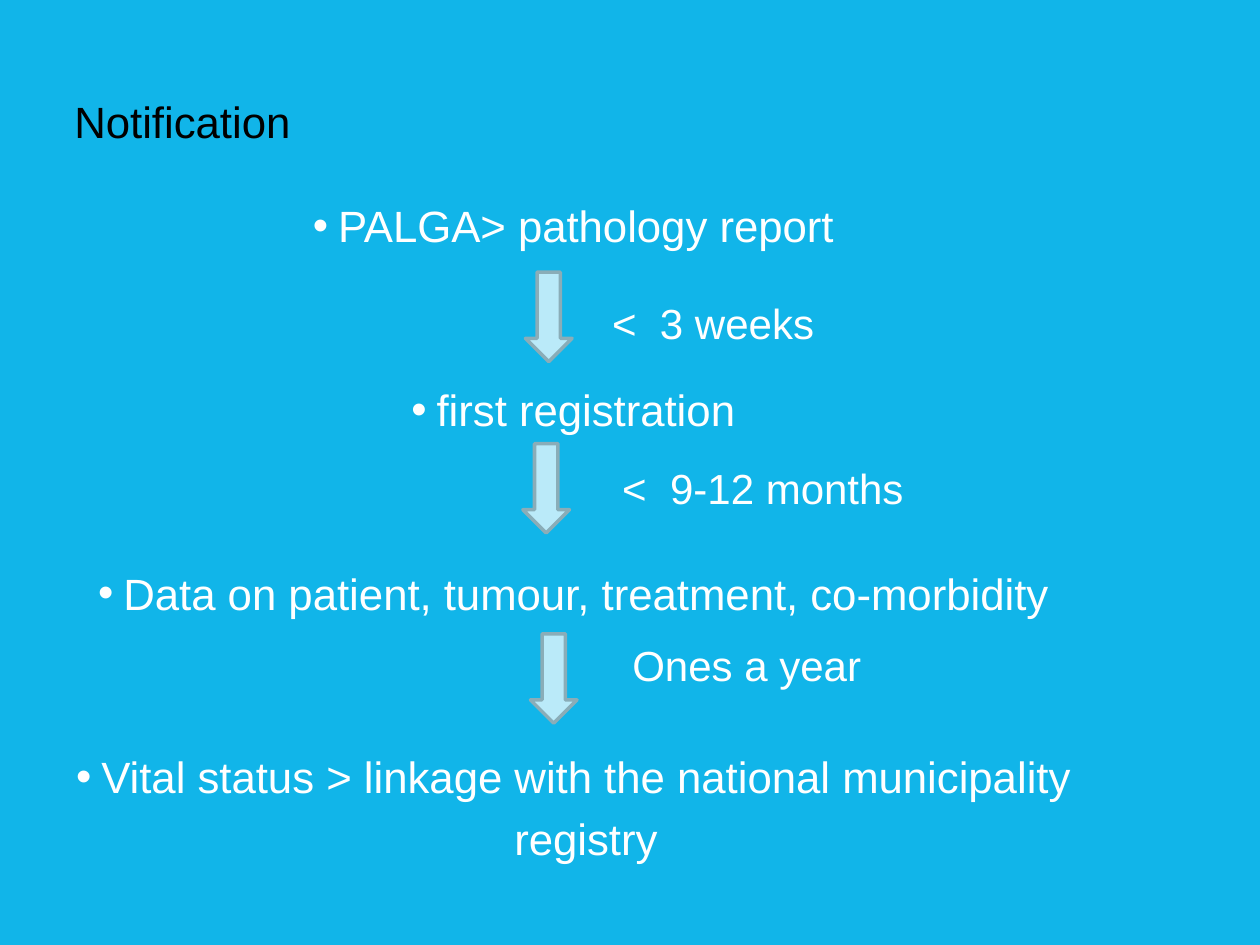
from lxml import etree
from pptx import Presentation
from pptx.dml.color import RGBColor
from pptx.enum import shapes, text
from pptx.oxml.ns import qn
from pptx.util import Inches, Pt

HEADING = "Notification"
STEPS = [
    "PALGA> pathology report",
    "first registration",
    "Data on patient, tumour, treatment, co-morbidity",
    "Vital status > linkage with the national municipality registry",
]
# Interval wording, its (left, top, width), and the (left, top) of its arrow
INTERVALS = [
    ("<\t3 weeks", (4.76, 2.31, 1.94), (4.17, 2.16)),
    ("<\t9-12 months", (4.84, 3.62, 2.57), (4.15, 3.52)),
    ("Ones a year", (4.92, 5.03, 2.57), (4.21, 5.03)),
]
ARROW_SIZE = (0.37, 0.71)
INTERVAL_HEIGHT = 0.5
NUMBER_TAB = 0.38
BULLET_INDENT = 0.2

THEME = {
    "font": "Arial",
    "background": RGBColor(0x11, 0xB5, 0xE9),
    "heading": RGBColor(0, 0, 0),
    "text": RGBColor(0xFF, 0xFF, 0xFF),
    "arrow": RGBColor(0xBA, 0xEA, 0xF9),
    "arrow_line": RGBColor(0x8A, 0xAD, 0xB8),
    "main_size": 25,
    "interval_size": 24,
    "step_leading": 35,
}


def place(shape, left, top, width, height):
    shape.left, shape.top = Inches(left), Inches(top)
    shape.width, shape.height = Inches(width), Inches(height)


def style(paragraph, size, color):
    font = paragraph.font
    for run in paragraph.runs:
        font = run.font
        font.name, font.size = THEME["font"], Pt(size)
        font.color.rgb = color


def prepare_frame(frame, anchor):
    frame.word_wrap = True
    frame.auto_size = text.MSO_AUTO_SIZE.NONE
    frame.vertical_anchor = anchor
    frame.margin_left = Inches(0.08)
    frame.margin_top = frame.margin_right = frame.margin_bottom = 0


def add_bullet(paragraph):
    properties = paragraph._p.get_or_add_pPr()
    properties.set("marL", str(Inches(BULLET_INDENT)))
    properties.set("indent", str(-Inches(BULLET_INDENT)))
    etree.SubElement(properties, qn("a:buChar"), char="•")


def add_tab_stop(paragraph):
    tabs = etree.SubElement(paragraph._p.get_or_add_pPr(), qn("a:tabLst"))
    etree.SubElement(tabs, qn("a:tab"), pos=str(Inches(NUMBER_TAB)), algn="l")


def fill_heading(title):
    place(title, 0.51, 0.34, 6.57, 0.83)
    frame = title.text_frame
    frame.text = HEADING
    prepare_frame(frame, text.MSO_ANCHOR.BOTTOM)
    paragraph = frame.paragraphs[0]
    paragraph.alignment = text.PP_ALIGN.LEFT
    paragraph.line_spacing = Pt(THEME["main_size"])
    style(paragraph, THEME["main_size"], THEME["heading"])


def fill_steps(body):
    place(body, 0.3, 1.51, 8.42, 4.88)
    frame = body.text_frame
    frame.text = "\n".join(STEPS)
    prepare_frame(frame, text.MSO_ANCHOR.TOP)
    leading = THEME["step_leading"]
    for index, step in enumerate(frame.paragraphs):
        add_bullet(step)
        step.alignment = text.PP_ALIGN.CENTER
        step.line_spacing = Pt(leading)
        step.space_before = Pt(2 * leading if index else 0)
        style(step, THEME["main_size"], THEME["text"])


def add_arrow(slide, left, top):
    arrow = slide.shapes.add_shape(
        shapes.MSO_SHAPE.DOWN_ARROW,
        *map(Inches, (left, top, *ARROW_SIZE)))
    arrow.shadow.inherit = False
    arrow.fill.solid()
    arrow.fill.fore_color.rgb = THEME["arrow"]
    arrow.line.color.rgb = THEME["arrow_line"]
    arrow.line.width = Pt(2)


def add_interval(slide, wording, left, top, width):
    interval = slide.shapes.add_textbox(
        *map(Inches, (left, top, width, INTERVAL_HEIGHT)))
    frame = interval.text_frame
    frame.word_wrap = True
    frame.auto_size = text.MSO_AUTO_SIZE.SHAPE_TO_FIT_TEXT
    frame.text = wording
    paragraph = frame.paragraphs[0]
    if "\t" in wording:
        add_tab_stop(paragraph)
    style(paragraph, THEME["interval_size"], THEME["text"])


def main():
    deck = Presentation()
    deck.slide_width, deck.slide_height = Inches(10), Inches(7.5)
    slide = deck.slides.add_slide(deck.slide_layouts[1])
    slide.background.fill.solid()
    slide.background.fill.fore_color.rgb = THEME["background"]

    fill_heading(slide.shapes.title)
    fill_steps(slide.placeholders[1])
    for wording, label_place, arrow_place in INTERVALS:
        add_arrow(slide, *arrow_place)
        add_interval(slide, wording, *label_place)
    deck.save("out.pptx")


if __name__ == "__main__":
    main()
